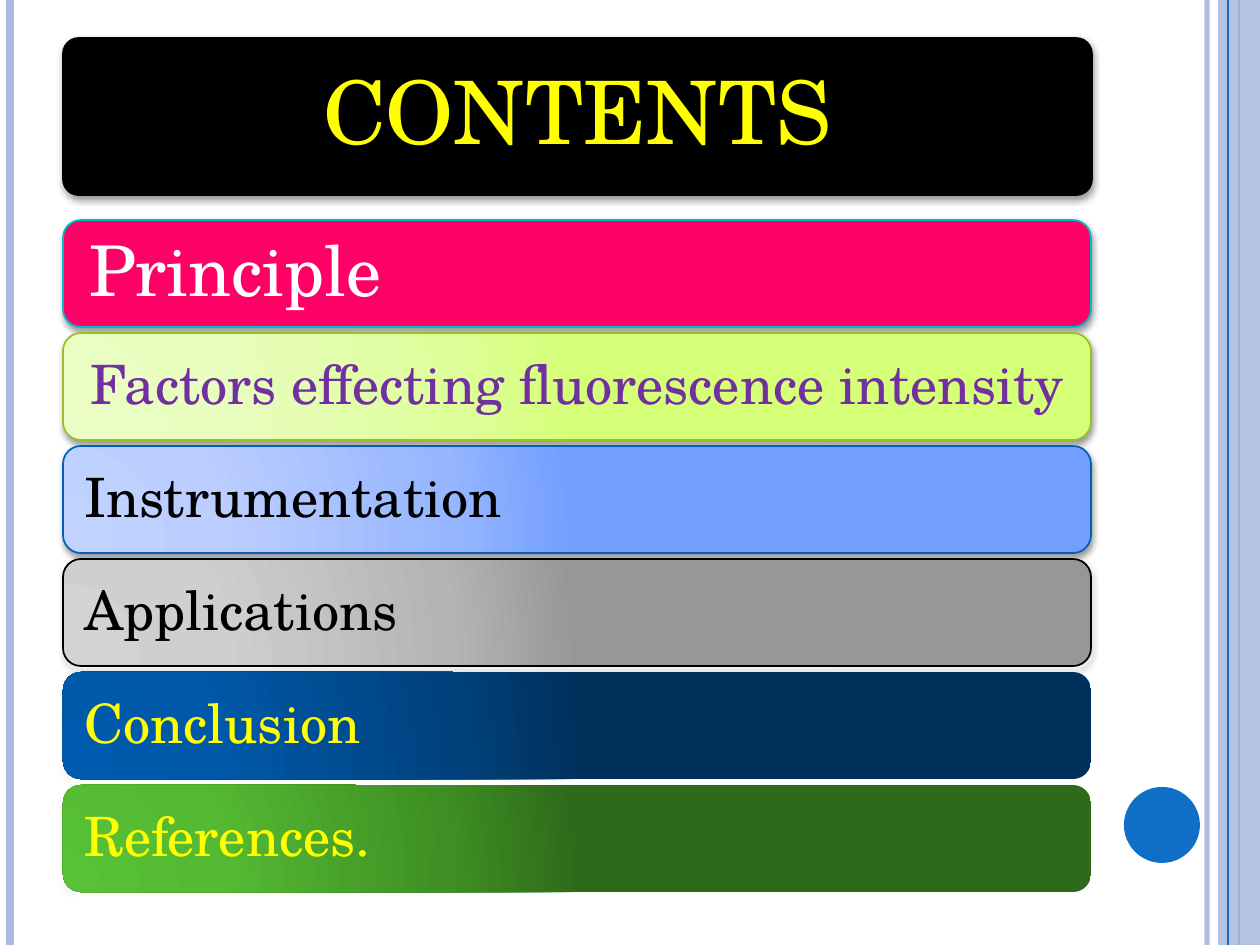
from dataclasses import dataclass

from lxml import etree
from pptx import Presentation
from pptx.dml.color import RGBColor
from pptx.enum.shapes import MSO_CONNECTOR, MSO_SHAPE
from pptx.enum.text import MSO_ANCHOR, PP_ALIGN
from pptx.oxml.ns import qn
from pptx.util import Emu, Pt

STRAIGHT = MSO_CONNECTOR.STRAIGHT
RECT, OVAL, ROUND = MSO_SHAPE.RECTANGLE, MSO_SHAPE.OVAL, MSO_SHAPE.ROUNDED_RECTANGLE
MIDDLE = MSO_ANCHOR.MIDDLE
CENTER, JUSTIFY = PP_ALIGN.CENTER, PP_ALIGN.JUSTIFY


@dataclass(frozen=True)
class Theme:
    font: str = "TeX Gyre Schola"
    title: int = 50
    lead: int = 40
    body: int = 31
    pale: str = "ABBBDF"
    blue: str = "0F6FC6"
    black: str = "000000"
    white: str = "FFFFFF"
    yellow: str = "FFFF00"
    purple: str = "7030A0"
    pink: str = "FF0066"
    lime: tuple = ("EBFDC5", "E9FDBF", "DEFE9C", "D5FF77")
    sky: tuple = ("C2D3FF", "BCCEFF", "97B6FF", "719EFF")
    gray: tuple = ("D3D3D3", "CFCFCF", "B4B4B4", "979797")
    navy: tuple = ("005BAE", "0058A8", "00427E", "00315D")
    green: tuple = ("58C135", "55BA33", "3E8F23", "2E6A1A")


THEME = Theme()
STOPS = (0, 30, 75, 100)
# fill, edge, text, text colour, size, alignment, side inset
ROWS = (
    (THEME.pink, "00BBC3", "Principle", THEME.white, THEME.lead, JUSTIFY, 21),
    (THEME.lime, "9BC025", "Factors effecting fluorescence intensity",
     THEME.purple, THEME.body, CENTER, 16),
    (THEME.sky, "0060B6", "Instrumentation", THEME.black, THEME.body, JUSTIFY, 16),
    (THEME.gray, THEME.black, "Applications", THEME.black, THEME.body, JUSTIFY, 16),
    (THEME.navy, None, "Conclusion", THEME.yellow, THEME.body, JUSTIFY, 16),
    (THEME.green, None, "References.", THEME.yellow, THEME.body, JUSTIFY, 16),
)


def px(n):
    return Emu(round(n * 914400 / 126))


def rgb(code):
    return RGBColor.from_string(code)


def node(root, tag, **attrs):
    return etree.SubElement(root, qn(tag), {k: str(v) for k, v in attrs.items()})


def fade(fill_root, alpha):
    """Give the first colour below an element an opacity in percent."""
    color = next(fill_root.iter(qn("a:srgbClr")))
    node(color, "a:alpha", val=alpha * 1000)


def blend(shape, colors):
    """Fill a shape with a radial gradient from its lower left."""
    props = shape.element.spPr
    grad = etree.Element(qn("a:gradFill"), rotWithShape="1")
    stops = node(grad, "a:gsLst")
    for pos, color in zip(STOPS, colors):
        node(node(stops, "a:gs", pos=pos * 1000), "a:srgbClr", val=color)
    node(node(grad, "a:path", path="circle"), "a:fillToRect",
         l=5000, t=100000, r=120000, b=10000)
    props.find(qn("a:prstGeom")).addnext(grad)


def shade(shape, alpha, drop):
    """Cast a soft shadow straight down."""
    shape.shadow.inherit = False
    effects = shape.element.spPr.find(qn("a:effectLst"))
    cast = node(effects, "a:outerShdw", blurRad=Pt(4), dist=Pt(drop),
                dir=90 * 60000, algn="ctr", rotWithShape=0)
    node(node(cast, "a:srgbClr", val=THEME.black), "a:alpha", val=alpha * 1000)


def stripe(slide, x, height, color, width, alpha=100):
    rule = slide.shapes.add_connector(STRAIGHT, px(x), 0, px(x), px(height))
    rule.line.color.rgb = rgb(color)
    rule.line.width = Pt(width)
    if alpha < 100:
        fade(rule.line._get_or_add_ln(), alpha)
    node(rule._element.spPr, "a:effectLst")


def plain(slide, kind, box, color, alpha=100):
    shape = slide.shapes.add_shape(kind, *map(px, box))
    shape.shadow.inherit = False
    shape.fill.solid()
    shape.fill.fore_color.rgb = rgb(color)
    shape.line.fill.background()
    if alpha < 100:
        fade(shape.element.spPr, alpha)


def frame(slide, box):
    """Draw the side stripes and the page dot."""
    left, top, width, height = box
    right = left + width
    stripe(slide, right - 53, height, THEME.pale, 3, 93)
    stripe(slide, left + 10, height, THEME.pale, 4.5)
    stripe(slide, right - 21, height, THEME.blue, 1.5)
    plain(slide, RECT, (right - 42, top, 42, height), THEME.pale, 87)
    stripe(slide, right - 32, height, THEME.blue, 0.75)
    plain(slide, OVAL, (right - 136, top + 787, 76, 76), THEME.blue)


def panel(slide, box, row, inset, round_by=0.1667, soft=True):
    """Draw one rounded bar with its label."""
    fill, edge, text, color, size, align, side = row
    bar = slide.shapes.add_shape(ROUND, *map(px, box))
    bar.adjustments[0] = round_by
    if isinstance(fill, tuple):
        blend(bar, fill)
    else:
        bar.fill.solid()
        bar.fill.fore_color.rgb = rgb(fill)
    if edge:
        bar.line.color.rgb = rgb(edge)
        bar.line.width = Pt(1)
    else:
        bar.line.fill.background()
    shade(bar, *((40, 2) if soft else (42, 1.6)))

    body = bar.text_frame
    body.word_wrap = True
    body.vertical_anchor = MIDDLE
    body.margin_left = body.margin_right = px(side)
    body.margin_top = body.margin_bottom = px(inset)
    para = body.paragraphs[0]
    para.text = text
    para.alignment = align
    para.line_spacing = 0.9
    para.font.name = THEME.font
    para.font.size = Pt(size)
    para.font.color.rgb = rgb(color)


def header(slide, box):
    row = (THEME.black, THEME.black, "CONTENTS", THEME.yellow, THEME.title, CENTER, 26)
    panel(slide, box, row, 26, 0.1, False)


def agenda(slide, box, gap=6):
    left, top, width, height = box
    step = (height + gap) // len(ROWS)
    for i, row in enumerate(ROWS):
        place = (left, top + i * step, width, step - gap)
        panel(slide, place, row, 8, soft=row[1] is not None)


def main():
    deck = Presentation()
    deck.slide_width, deck.slide_height = px(1260), px(945)
    slide = deck.slides.add_slide(deck.slide_layouts[6])
    frame(slide, (0, 0, 1260, 945))
    header(slide, (63, 38, 1029, 157))
    agenda(slide, (63, 220, 1028, 672))
    deck.save("out.pptx")


if __name__ == "__main__":
    main()
